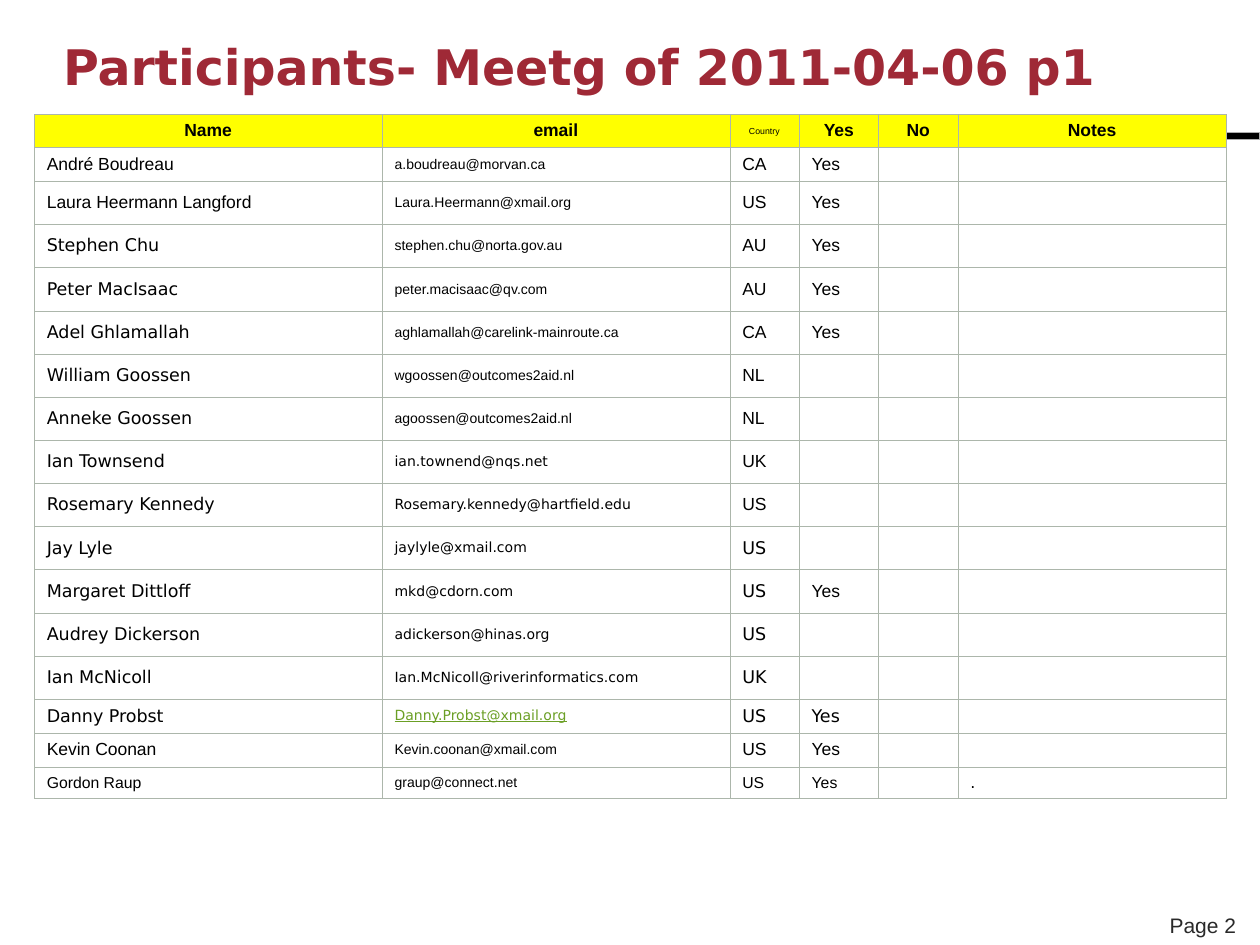
import pptx
import pptx.util
import pptx.dml.color
import pptx.enum.shapes
import pptx.enum.text
import pptx.oxml.ns
from dataclasses import dataclass
from lxml import etree

Cm, Pt = pptx.util.Cm, pptx.util.Pt
ALIGN, ANCHOR = pptx.enum.text.PP_ALIGN, pptx.enum.text.MSO_ANCHOR
qn = pptx.oxml.ns.qn


@dataclass(frozen=True)
class Theme:
    sans: str = "Arial"
    wide: str = "DejaVu Sans"
    title: str = "9F2936"
    text: str = "000000"
    page: str = "292929"
    link: str = "6B9F25"
    header: str = "FFFF00"
    grid: str = "ACB6AB"
    bar: str = "000000"
    bar_edge: str = "ADADAD"
    title_pt: int = 28
    page_pt: int = 12
    cell_pt: int = 10
    email_pt: int = 8
    small_pt: int = 5


T = Theme()

# Content
TITLE = "Participants- Meetg of 2011-04-06 p1"
PAGE = "Page 2"
HEADERS = ["Name", "email", "Country", "Yes", "No", "Notes"]
COL_WIDTHS = [7.01, 7.01, 1.4, 1.6, 1.6, 5.41]
# Name, email, country, attending, and each one's font: s = sans, w = wide
PEOPLE = [
    ("André Boudreau", "a.boudreau@morvan.ca", "CA", "Yes", "ssss"),
    ("Laura Heermann Langford", "Laura.Heermann@xmail.org", "US", "Yes", "ssss"),
    ("Stephen Chu", "stephen.chu@norta.gov.au", "AU", "Yes", "wsss"),
    ("Peter MacIsaac", "peter.macisaac@qv.com", "AU", "Yes", "wsss"),
    ("Adel Ghlamallah", "aghlamallah@carelink-mainroute.ca", "CA", "Yes", "wsss"),
    ("William Goossen", "wgoossen@outcomes2aid.nl", "NL", "", "wsss"),
    ("Anneke Goossen", "agoossen@outcomes2aid.nl", "NL", "", "wsss"),
    ("Ian Townsend", "ian.townend@nqs.net", "UK", "", "wwss"),
    ("Rosemary Kennedy", "Rosemary.kennedy@hartfield.edu", "US", "", "wwss"),
    ("Jay Lyle", "jaylyle@xmail.com", "US", "", "wwws"),
    ("Margaret Dittloff", "mkd@cdorn.com", "US", "Yes", "wwws"),
    ("Audrey Dickerson", "adickerson@hinas.org", "US", "", "wwws"),
    ("Ian McNicoll", "Ian.McNicoll@riverinformatics.com", "UK", "", "wwws"),
    ("Danny Probst", "Danny.Probst@xmail.org", "US", "Yes", "wwww"),
    ("Kevin Coonan", "Kevin.coonan@xmail.com", "US", "Yes", "ssss"),
    ("Gordon Raup", "graup@connect.net", "US", "Yes", "ssss"),
]
LINKED = "Danny Probst"
LAST_NOTE = "."
# Header and first person are low, the middle rows tall, the end low again
ROW_HEIGHTS = [0.66] * 2 + [0.87] * 12 + [0.66] * 2 + [0.62]


def rgb(value):
    return pptx.dml.color.RGBColor.from_string(value)


def write(tf, text, size, font, color, align=ALIGN.LEFT, bold=False, underline=False):
    p = tf.paragraphs[0]
    p.alignment = align
    r = p.add_run()
    r.text = text
    r.font.size, r.font.name = Pt(size), font
    r.font.bold, r.font.underline = bold, underline
    r.font.color.rgb = rgb(color)


def add_borders(cell):
    tcPr = cell._tc.get_or_add_tcPr()
    for side in ("a:lnL", "a:lnR", "a:lnT", "a:lnB"):
        ln = etree.SubElement(tcPr, qn(side), w=str(Pt(0.25)))
        fill = etree.SubElement(ln, qn("a:solidFill"))
        etree.SubElement(fill, qn("a:srgbClr"), val=T.grid)


def fill_cell(cell, text, size, font, color=T.text, header=False, underline=False):
    cell.vertical_anchor = ANCHOR.MIDDLE
    add_borders(cell)
    if header:
        cell.fill.solid()
        cell.fill.fore_color.rgb = rgb(T.header)
    else:
        cell.fill.background()
    if text:
        write(cell.text_frame, text, size, font, color,
              ALIGN.CENTER if header else ALIGN.LEFT,
              header and size > T.small_pt, underline)
    else:  # keep an empty cell from stretching its row
        etree.SubElement(cell.text_frame.paragraphs[0]._p, qn("a:endParaRPr"),
                         sz=str(size * 100))


prs = pptx.Presentation()
prs.slide_width, prs.slide_height = Cm(25.4), Cm(19.05)
s = prs.slides.add_slide(prs.slide_layouts[5])

# Bar behind the table
bar = s.shapes.add_shape(pptx.enum.shapes.MSO_SHAPE.RECTANGLE,
                         Cm(1.22), Cm(2.67), Cm(24.18), Cm(0.15))
bar.shadow.inherit = False
bar.fill.solid()
bar.fill.fore_color.rgb = rgb(T.bar)
bar.line.color.rgb = rgb(T.bar_edge)
bar.line.width = Pt(0.75)

# Title
sp = s.shapes.title
sp.left, sp.top, sp.width, sp.height = Cm(1.27), Cm(0.33), Cm(23.22), Cm(2.01)
tf = sp.text_frame
tf.margin_left = tf.margin_right = tf.margin_top = tf.margin_bottom = 0
tf.vertical_anchor = ANCHOR.MIDDLE
tf.auto_size = pptx.enum.text.MSO_AUTO_SIZE.NONE
write(tf, TITLE, T.title_pt, T.wide, T.title, bold=True)

# Participants table
table = s.shapes.add_table(len(ROW_HEIGHTS), len(HEADERS), Cm(0.69), Cm(2.31),
                           Cm(sum(COL_WIDTHS)), Cm(sum(ROW_HEIGHTS))).table
table.first_row = table.horz_banding = False
for column, width in zip(table.columns, COL_WIDTHS):
    column.width = Cm(width)
for row, height in zip(table.rows, ROW_HEIGHTS):
    row.height = Cm(height)

for j, text in enumerate(HEADERS):
    size = T.small_pt if text == "Country" else T.cell_pt
    fill_cell(table.cell(0, j), text, size, T.sans, header=True)

for i, (*texts, fonts) in enumerate(PEOPLE, start=1):
    last = i == len(PEOPLE)
    values = texts + ["", LAST_NOTE if last else ""]
    for j, (text, font) in enumerate(zip(values, fonts + "sw")):
        is_email = HEADERS[j] == "email"
        linked = is_email and texts[0] == LINKED
        size = T.email_pt if is_email else T.cell_pt - last
        fill_cell(table.cell(i, j), text, size, T.wide if font == "w" else T.sans,
                  T.link if linked else T.text, underline=linked)

# Page number
tf = s.shapes.add_textbox(Cm(22.4), Cm(18.26), Cm(2.77), Cm(0.76)).text_frame
tf.word_wrap = True
tf.vertical_anchor = ANCHOR.BOTTOM
write(tf, PAGE, T.page_pt, T.sans, T.page, ALIGN.RIGHT)

prs.save("out.pptx")
